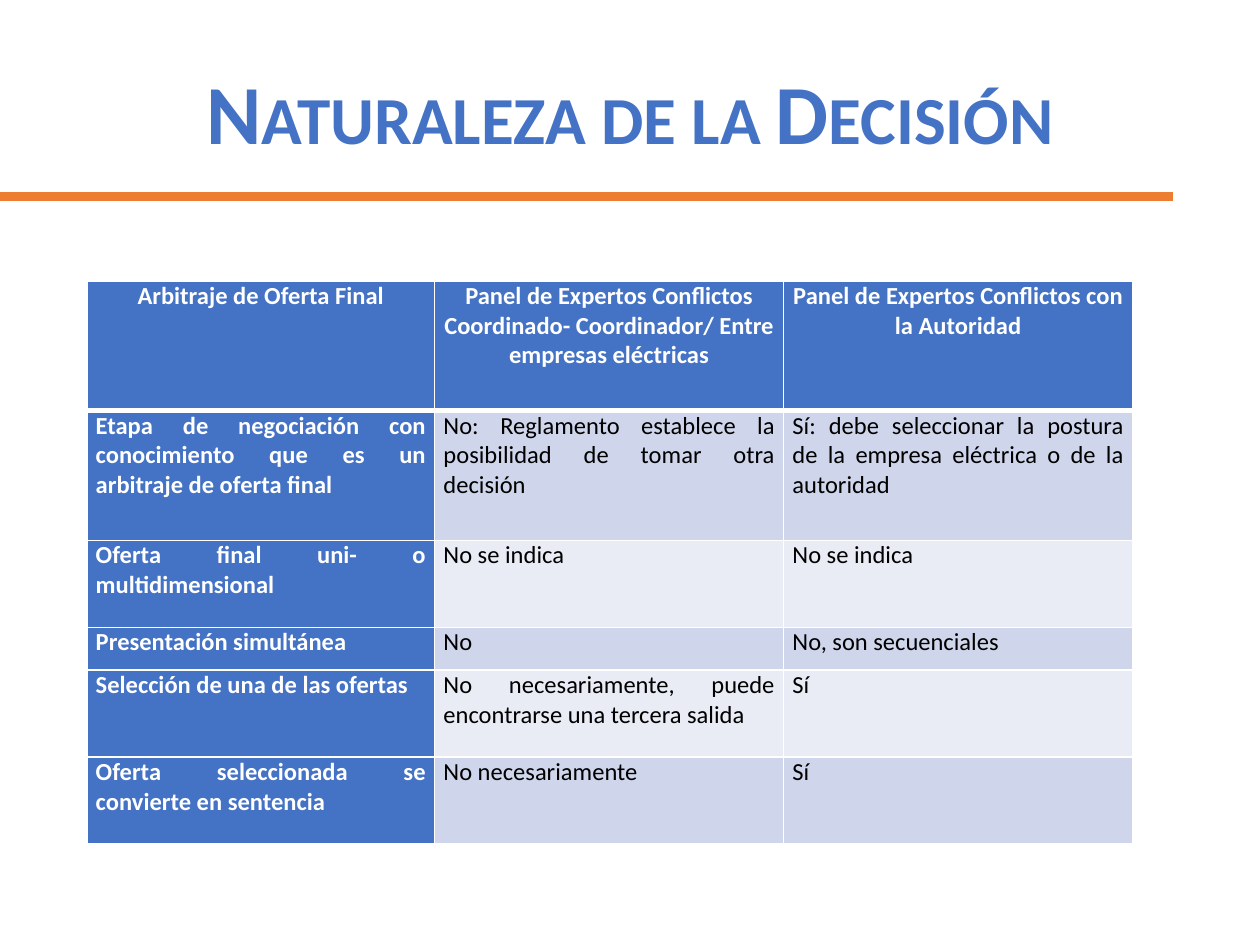
from pptx import Presentation
from pptx import util as u
from pptx.dml.color import RGBColor
from pptx.enum import shapes, text
from pptx.oxml import ns
from lxml import etree

FONT = "Calibri"
COLORS = {"blue": "4472C4", "orange": "ED7D31", "white": "FFFFFF",
          "black": "000000", "band": "CFD5EA", "pale": "E9EBF5"}
COLUMN_WIDTHS = [2.76, 2.77, 2.77]
ROW_HEIGHTS = [1.03, 1.03, 0.69, 0.34, 0.69, 0.69]
ROWS = [
    ["Arbitraje de Oferta Final",
     "Panel de Expertos Conflictos Coordinado- Coordinador/ Entre empresas eléctricas",
     "Panel de Expertos Conflictos con la Autoridad"],
    ["Etapa de negociación con conocimiento que es un arbitraje de oferta final",
     "No: Reglamento establece la posibilidad de tomar otra decisión",
     "Sí: debe seleccionar la postura de la empresa eléctrica o de la autoridad"],
    ["Oferta final uni- o multidimensional", "No se indica", "No se indica"],
    ["Presentación simultánea", "No", "No, son secuenciales"],
    ["Selección de una de las ofertas",
     "No necesariamente, puede encontrarse una tercera salida", "Sí"],
    ["Oferta seleccionada se convierte en sentencia", "No necesariamente", "Sí"],
]


def color(name):
    return RGBColor.from_string(COLORS[name])


def format_span(span, size, name, bold):
    span.font.name = FONT
    span.font.size = u.Pt(size)
    span.font.bold = bold
    span.font.color.rgb = color(name)


def add_title(page, wording):
    title = page.shapes.title
    title.left, title.top = u.Inches(0.69), u.Inches(0.4)
    title.width, title.height = u.Inches(8.62), u.Inches(1.07)
    frame = title.text_frame
    frame.text = wording
    frame.auto_size = text.MSO_AUTO_SIZE.NONE
    frame.vertical_anchor = text.MSO_ANCHOR.MIDDLE
    para = frame.paragraphs[0]
    para.alignment = text.PP_ALIGN.CENTER
    para.line_spacing = 0.9
    span = para.runs[0]
    format_span(span, 48, "blue", True)
    span.font._element.set("cap", "small")


def add_rule(page):
    rule = page.shapes.add_connector(shapes.MSO_CONNECTOR.STRAIGHT, u.Inches(9.31),
                                     u.Inches(1.56), u.Inches(0), u.Inches(1.56))
    rule.line.color.rgb = color("orange")
    rule.line.width = u.Pt(5)
    etree.SubElement(rule._element.spPr, ns.qn("a:effectLst"))


def set_borders(cell, bottom):
    properties = cell._tc.get_or_add_tcPr()
    widths = {"lnL": 1, "lnR": 1, "lnT": 1, "lnB": bottom}
    for position, (side, width) in enumerate(widths.items()):
        line = etree.Element(ns.qn("a:" + side), w=str(u.Pt(width)))
        fill = etree.SubElement(line, ns.qn("a:solidFill"))
        etree.SubElement(fill, ns.qn("a:srgbClr"), val=COLORS["white"])
        properties.insert(position, line)


def fill_cell(cell, wording, row, column):
    header = row == 0
    strong = header or column == 0
    cell.text = wording
    cell.margin_left = cell.margin_right = u.Inches(0.07)
    cell.margin_top = cell.margin_bottom = 0
    cell.fill.solid()
    cell.fill.fore_color.rgb = color("blue" if strong else "band" if row % 2 else "pale")
    para = cell.text_frame.paragraphs[0]
    para.alignment = text.PP_ALIGN.CENTER if header else text.PP_ALIGN.JUSTIFY
    para.space_before = para.space_after = u.Pt(6)
    format_span(para.runs[0], 14, "white" if strong else "black", strong)
    set_borders(cell, 3 if header else 1)


def add_comparison(page):
    table = page.shapes.add_table(
        len(ROWS), len(COLUMN_WIDTHS), u.Inches(0.69), u.Inches(2.23),
        u.Inches(sum(COLUMN_WIDTHS)), u.Inches(sum(ROW_HEIGHTS))).table
    table.first_col = True
    for column, width in zip(table.columns, COLUMN_WIDTHS):
        column.width = u.Inches(width)
    for row, height in zip(table.rows, ROW_HEIGHTS):
        row.height = u.Inches(height)
    for row, wordings in enumerate(ROWS):
        for column, wording in enumerate(wordings):
            fill_cell(table.cell(row, column), wording, row, column)


def main():
    deck = Presentation()
    deck.slide_width, deck.slide_height = u.Inches(10), u.Inches(7.5)
    page = deck.slides.add_slide(deck.slide_layouts.get_by_name("Title Only"))
    add_title(page, "Naturaleza de la Decisión")
    add_comparison(page)
    add_rule(page)
    deck.save("out.pptx")


if __name__ == "__main__":
    main()
